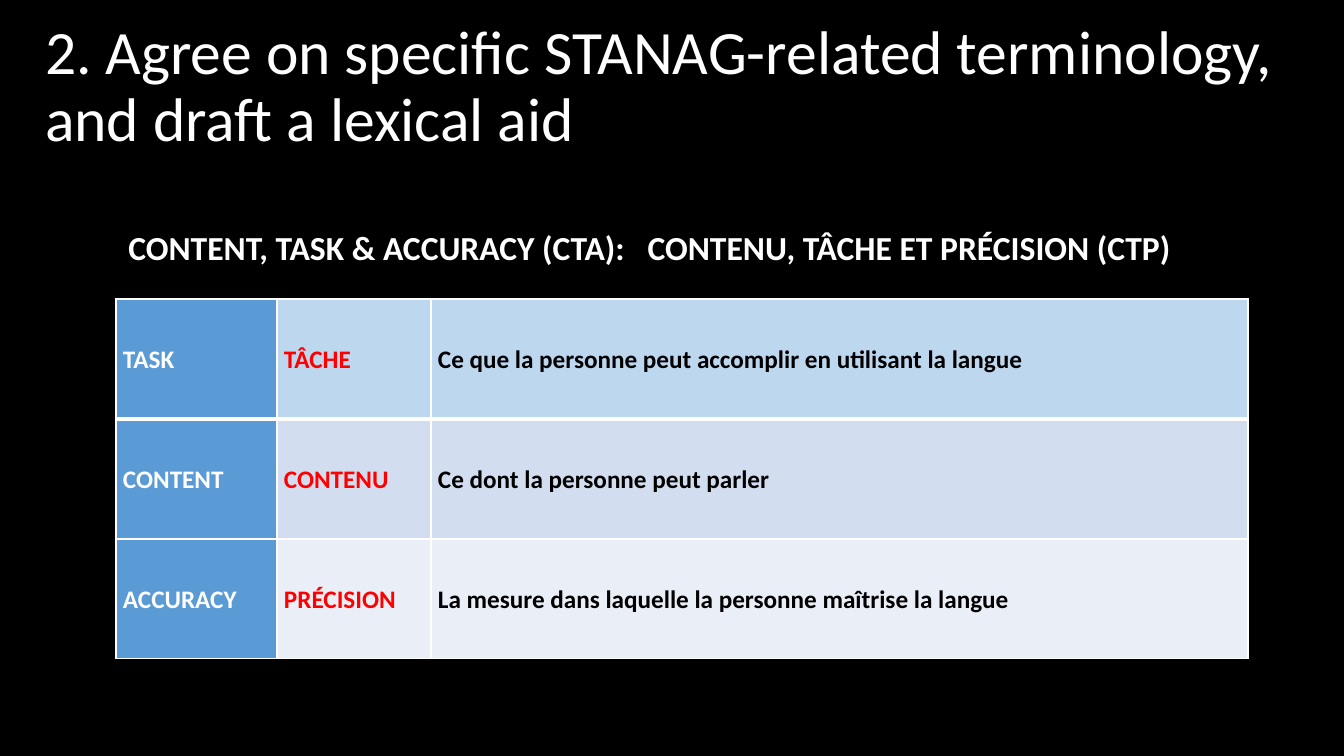
from lxml import etree
from pptx import Presentation
from pptx.dml.color import RGBColor
from pptx.enum.text import MSO_ANCHOR, PP_ALIGN
from pptx.oxml.ns import qn
from pptx.util import Pt

PX = 914400 / 100.8
MIDDLE = MSO_ANCHOR.MIDDLE
LEFT, CENTER = PP_ALIGN.LEFT, PP_ALIGN.CENTER
FONT = "Calibri"
COLORS = {
    "background": "000000",
    "light": "FFFFFF",
    "dark": "000000",
    "french": "FF0000",
    "english_fill": "5B9BD5",
}


def px(*lengths):
    return [round(length * PX) for length in lengths]


def format_runs(paragraph, size, color, bold, spacing):
    paragraph.line_spacing = spacing
    for run in paragraph.runs:
        run.font.name = FONT
        run.font.size = Pt(size)
        run.font.bold = bold
        run.font.color.rgb = RGBColor.from_string(color)


prs = Presentation()
prs.slide_width, prs.slide_height = px(1344, 756)
slide = prs.slides.add_slide(prs.slide_layouts[5])
slide.background.fill.solid()
slide.background.fill.fore_color.rgb = RGBColor.from_string(COLORS["background"])

title = slide.shapes.title
title.left, title.top, title.width, title.height = px(35, 15, 1273, 146)
title.text_frame.text = "2. Agree on specific STANAG-related terminology, and draft a lexical aid"
title.text_frame.vertical_anchor = MIDDLE
title.text_frame.paragraphs[0].alignment = LEFT
format_runs(title.text_frame.paragraphs[0], 44, COLORS["light"], False, 0.9)

terms = [
    ("TASK", "TÂCHE", "Ce que la personne peut accomplir en utilisant la langue"),
    ("CONTENT", "CONTENU", "Ce dont la personne peut parler"),
    ("ACCURACY", "PRÉCISION", "La mesure dans laquelle la personne maîtrise la langue"),
]
column_widths = px(161, 154, 817)
row_fills = ["BDD7EE", "D2DEEF", "EAEFF7"]
text_colors = [COLORS["light"], COLORS["french"], COLORS["dark"]]

lexicon = slide.shapes.add_table(3, 3, *px(116, 299, 1132, 360)).table
lexicon.first_row = False
lexicon.horz_banding = False
for column, width in zip(lexicon.columns, column_widths):
    column.width = width

for r, term in enumerate(terms):
    for c, wording in enumerate(term):
        cell = lexicon.cell(r, c)
        cell.text_frame.text = wording
        cell.vertical_anchor = MIDDLE
        cell.margin_left, cell.margin_right, cell.margin_top, cell.margin_bottom = px(7, 7, 0, 0)
        format_runs(cell.text_frame.paragraphs[0], 18, text_colors[c], True, 1.07)

        border_widths = {"L": 1, "R": 1, "T": 3 if r == 1 else 1, "B": 3 if r == 0 else 1}
        properties = cell._tc.get_or_add_tcPr()
        for side, width in border_widths.items():
            border = etree.SubElement(properties, qn(f"a:ln{side}"), w=str(Pt(width)))
            border_fill = etree.SubElement(border, qn("a:solidFill"))
            etree.SubElement(border_fill, qn("a:srgbClr"), val=COLORS["light"])
        cell.fill.solid()
        cell.fill.fore_color.rgb = RGBColor.from_string(
            COLORS["english_fill"] if c == 0 else row_fills[r]
        )

heading = slide.shapes.add_textbox(*px(93, 219, 1113, 53)).text_frame
heading.word_wrap = True
heading_line = heading.paragraphs[0]
heading_line.alignment = CENTER
heading_line.space_after = Pt(8)
for wording in ("CONTENT, TASK & ACCURACY (CTA):", " ", "CONTENU, TÂCHE ET PRÉCISION (CTP)"):
    heading_line.add_run().text = wording
format_runs(heading_line, 24, COLORS["light"], True, 1.07)
heading_line.runs[1]._r.get_or_add_rPr().set("spc", "1080")

prs.save("out.pptx")
